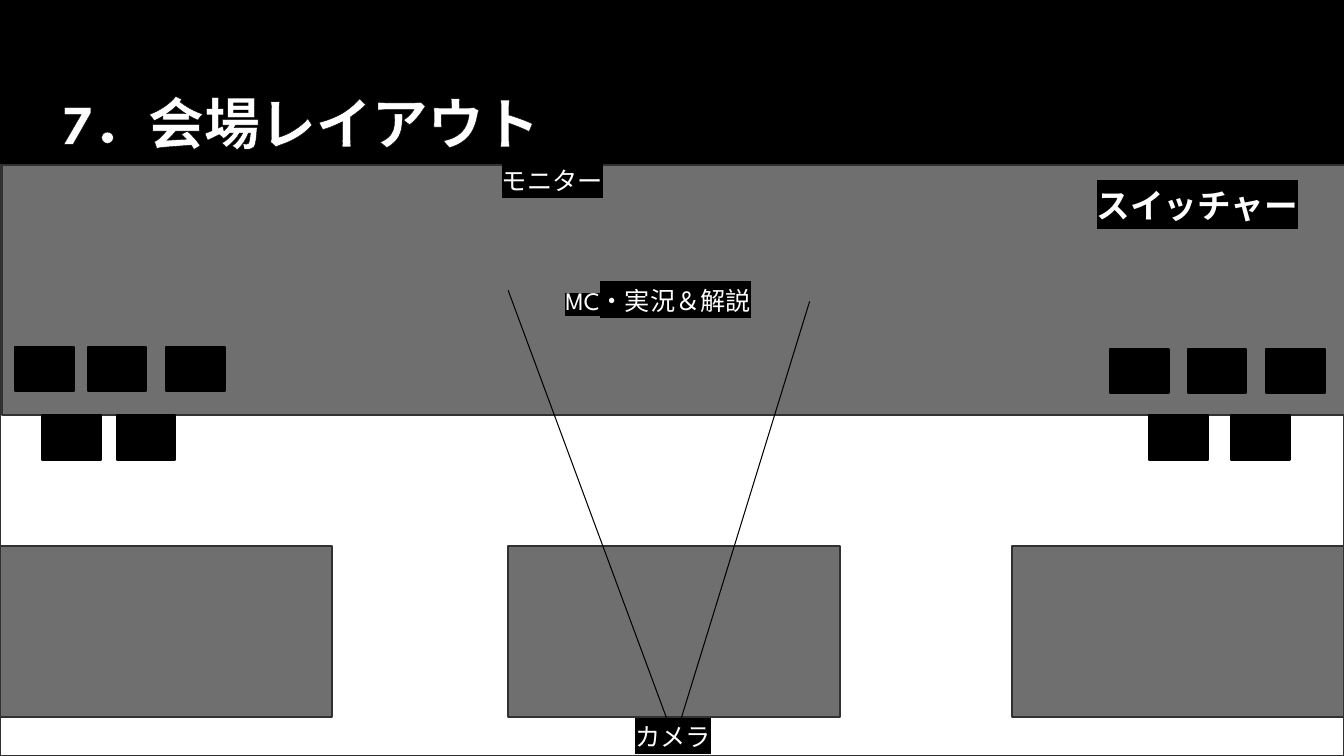
from lxml.etree import SubElement
from pptx import Presentation
from pptx.dml.color import RGBColor
from pptx.enum.shapes import MSO_CONNECTOR, MSO_SHAPE
from pptx.enum.text import MSO_ANCHOR, MSO_AUTO_SIZE, PP_ALIGN
from pptx.oxml import parse_xml
from pptx.oxml.ns import nsdecls, qn
from pptx.util import Inches, Pt

# Content
W, H = 13.33, 7.5
FONT = "League Spartan"
KANA_FONT = "Noto Sans CJK JP"  # has Japanese glyphs, so highlights get full height
COLORS = {"black": "000000", "white": "FFFFFF", "grey": "6F6F6F", "edge": "313131"}
TITLE = "7．会場レイアウト"
FLOOR_TOP = 1.64
STAGE_H = 2.48
TABLE_W, TABLE_H, TABLE_TOP = 3.29, 1.69, 5.42
TABLE_LEFTS = (0, 5.04, W - TABLE_W)
SEAT_W, SEAT_H = 0.58, 0.44
SEAT_ROWS = [  # top, left edges
    (4.12, (0.42, 1.16, 11.4, 12.21)),
    (3.44, (0.15, 0.87, 1.65)),
    (3.46, (11.01, 11.78, 12.56)),
]
LABELS = [  # text, box, format
    ("スイッチャー", (10.78, 1.79, 3.43, 0.5), {"size": 24, "bold": True}),
    ("モニター", (4.88, 1.59, 3.57, 0.4), {"align": PP_ALIGN.JUSTIFY}),
    ("MC・実況＆解説", (5.51, 2.78, 2.15, 0.4), {"wrap": False}),
    ("カメラ", (6.2, 7.11, 0.96, 0.4), {"wrap": False}),
]
SIGHT_LINES = [((6.68, 7.31), (5.04, 2.88)), ((6.7, 7.31), (8.03, 2.99))]


def rgb(name):
    return RGBColor.from_string(COLORS[name])


def write(tf, text, size=18, bold=False, align=PP_ALIGN.LEFT, wrap=True,
          east_asian=KANA_FONT, highlight=None, outline=None):
    tf.word_wrap = wrap
    p = tf.paragraphs[0]
    p.alignment = align
    r = p.add_run()
    r.text = text
    r.font.size, r.font.bold, r.font.name = Pt(size), bold, FONT
    r.font.color.rgb = rgb("white")
    rPr = r.font._element
    SubElement(rPr, qn("a:ea")).set("typeface", east_asian)
    if highlight:
        rPr.find(qn("a:solidFill")).addnext(parse_xml(
            f'<a:highlight {nsdecls("a")}><a:srgbClr val="{COLORS[highlight]}"/></a:highlight>'))
    if outline:
        rPr.insert(0, parse_xml(
            f'<a:ln {nsdecls("a")} w="{Pt(0.25)}"><a:solidFill>'
            f'<a:srgbClr val="{COLORS[outline]}"/></a:solidFill></a:ln>'))


def add_block(s, x, y, w, h, fill, edge="edge"):
    sp = s.shapes.add_shape(MSO_SHAPE.RECTANGLE, *map(Inches, (x, y, w, h)))
    sp.shadow.inherit = False
    sp.fill.solid()
    sp.fill.fore_color.rgb = rgb(fill)
    sp.line.color.rgb = rgb(edge)
    sp.line.width = Pt(1.5)


def main():
    prs = Presentation()
    prs.slide_width, prs.slide_height = Inches(W), Inches(H)
    s = prs.slides.add_slide(prs.slide_layouts[5])
    s.background.fill.solid()
    s.background.fill.fore_color.rgb = rgb("black")

    # Title
    title = s.shapes.title
    title.left, title.top, title.width, title.height = map(Inches, (0.51, 0.17, 10.83, 2.08))
    title.text_frame.vertical_anchor = MSO_ANCHOR.MIDDLE
    write(title.text_frame, TITLE, size=40, bold=True, east_asian=FONT, outline="black")

    # Floor, tables, stage
    add_block(s, 0, FLOOR_TOP, W, H - FLOOR_TOP, "white")
    for left in TABLE_LEFTS:
        add_block(s, left, TABLE_TOP, TABLE_W, TABLE_H, "grey")
    add_block(s, 0.02, FLOOR_TOP, W, STAGE_H, "grey")

    # Seats
    for top, lefts in SEAT_ROWS:
        for left in lefts:
            add_block(s, left, top, SEAT_W, SEAT_H, "black", "black")

    # Camera field of view, beneath the labels so that no line crosses a letter
    for start, end in SIGHT_LINES:
        line = s.shapes.add_connector(MSO_CONNECTOR.STRAIGHT, *map(Inches, start + end))
        line.line.color.rgb = rgb("black")
        line.line.width = Pt(0.75)
        SubElement(line._element.spPr, qn("a:effectLst"))

    # Labels
    for text, box, fmt in LABELS:
        tf = s.shapes.add_textbox(*map(Inches, box)).text_frame
        tf.auto_size = MSO_AUTO_SIZE.SHAPE_TO_FIT_TEXT
        write(tf, text, highlight="black", **fmt)

    prs.save("out.pptx")


if __name__ == "__main__":
    main()
